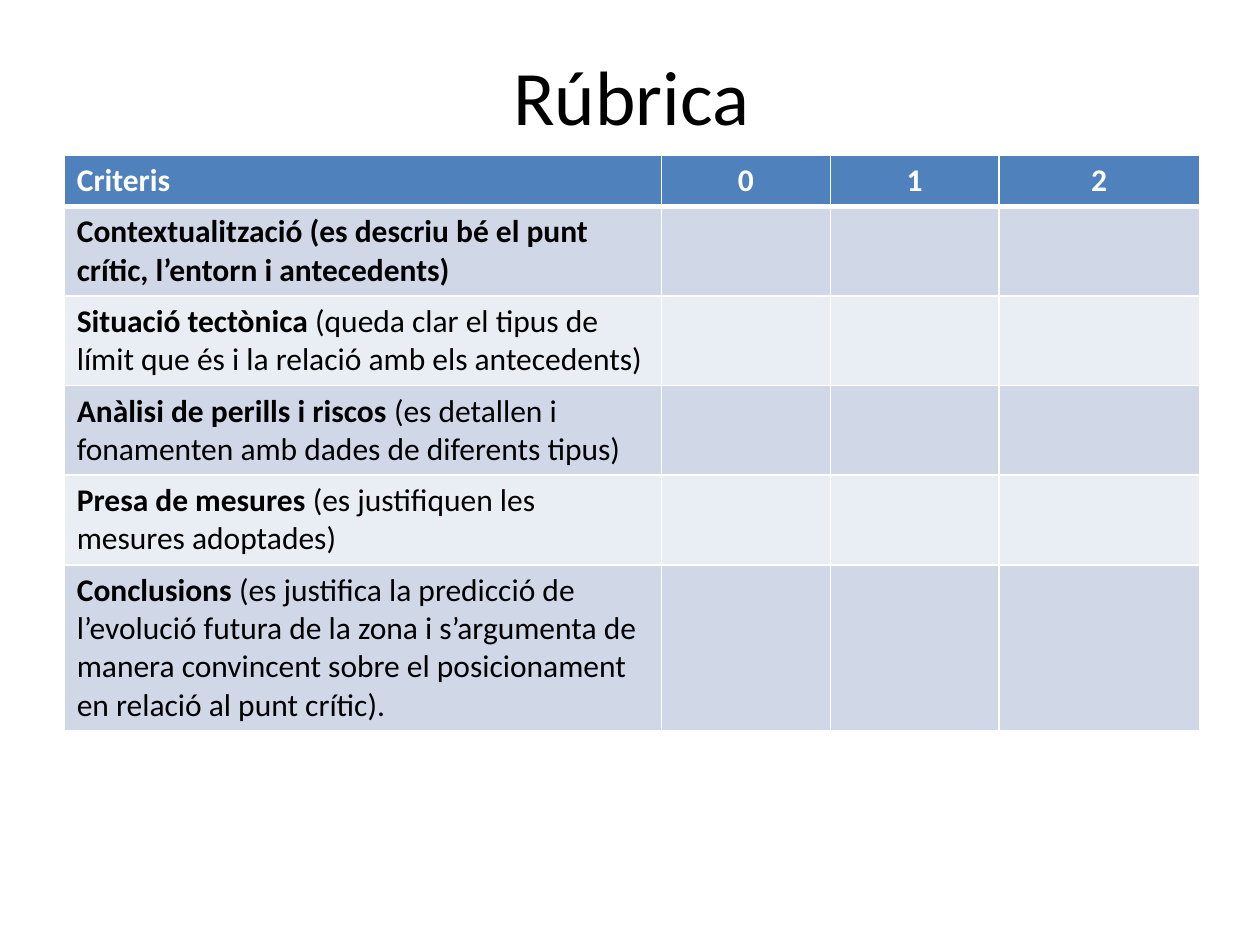
from dataclasses import dataclass

from lxml import etree
from pptx import Presentation
from pptx.dml.color import RGBColor
from pptx.enum.text import MSO_ANCHOR, PP_ALIGN
from pptx.oxml.ns import qn
from pptx.util import Inches, Pt

LEFT, CENTER = PP_ALIGN.LEFT, PP_ALIGN.CENTER
MIDDLE = MSO_ANCHOR.MIDDLE
TITLE_ONLY = 5


@dataclass(frozen=True)
class Theme:
    font: str = "Calibri"
    title_size: int = 44
    table_size: int = 18
    text: str = "000000"
    header_text: str = "FFFFFF"
    header_fill: str = "4F81BD"
    bands: tuple = ("D0D8E8", "E9EDF4")
    border: str = "FFFFFF"
    thin: int = 1
    thick: int = 3


class RubricSlide:
    """Holds the theme and the slide; lengths are shares of the slide's size."""

    def __init__(self, prs, theme):
        self.theme = theme
        self.width, self.height = prs.slide_width, prs.slide_height
        self.slide = prs.slides.add_slide(prs.slide_layouts[TITLE_ONLY])

    def box(self, left, top, width, height):
        return (int(left * self.width), int(top * self.height),
                int(width * self.width), int(height * self.height))

    def style(self, paragraph, size, color, align):
        paragraph.alignment = align
        font = paragraph.font
        font.name, font.size = self.theme.font, Pt(size)
        font.color.rgb = RGBColor.from_string(color)

    def title(self, text, *area):
        title = self.slide.shapes.title
        title.left, title.top, title.width, title.height = self.box(*area)
        frame = title.text_frame
        frame.text = text
        frame.vertical_anchor = MIDDLE
        self.style(frame.paragraphs[0], self.theme.title_size, self.theme.text, CENTER)

    def borders(self, cell, **points):
        """Draw the given sides (L, R, T, B); they go ahead of the cell's fill."""
        properties = cell._tc.get_or_add_tcPr()
        for side, width in points.items():
            line = etree.SubElement(properties, qn(f"a:ln{side}"), w=str(Pt(width)))
            fill = etree.SubElement(line, qn("a:solidFill"))
            etree.SubElement(fill, qn("a:srgbClr"), val=self.theme.border)

    def cell(self, cell, row, runs, align):
        theme = self.theme
        is_header = row == 0
        self.borders(cell, L=theme.thin, R=theme.thin,
                     T=theme.thick if row == 1 else theme.thin,
                     B=theme.thick if is_header else theme.thin)
        cell.fill.solid()
        fill = theme.header_fill if is_header else theme.bands[(row - 1) % 2]
        cell.fill.fore_color.rgb = RGBColor.from_string(fill)
        paragraph = cell.text_frame.paragraphs[0]
        color = theme.header_text if is_header else theme.text
        self.style(paragraph, theme.table_size, color, align)
        for text, bold in runs:
            run = paragraph.add_run()
            run.text, run.font.bold = text, bold
            # Table styles override paragraph defaults, so runs carry the format
            run.font.name, run.font.size = theme.font, Pt(theme.table_size)
            run.font.color.rgb = RGBColor.from_string(color)

    def table(self, left, top, columns, heights, rows):
        area = self.box(left, top, sum(columns), sum(heights))
        table = self.slide.shapes.add_table(len(rows), len(columns), *area).table
        for column, share in zip(table.columns, columns):
            column.width = int(share * self.width)
        for r, (height, contents) in enumerate(zip(heights, rows)):
            table.rows[r].height = int(height * self.height)
            for c, runs in enumerate(contents):
                self.cell(table.cell(r, c), r, runs, CENTER if c else LEFT)


# Rubric content: each criterion is a bold name and a plain explanation
SCORES = ["0", "1", "2"]
CRITERIA = [
    ("Contextualització (es descriu bé el punt crític, l’entorn i antecedents)", ""),
    ("Situació tectònica", " (queda clar el tipus de límit que és i la relació "
     "amb els antecedents)"),
    ("Anàlisi de perills i riscos ", "(es detallen i fonamenten amb dades de "
     "diferents tipus)"),
    ("Presa de mesures ", "(es justifiquen les mesures adoptades)"),
    ("Conclusions ", "(es justifica la predicció de l’evolució futura de la zona i "
     "s’argumenta de manera convincent sobre el posicionament en relació al punt "
     "crític)."),
]


def main():
    prs = Presentation()
    prs.slide_width, prs.slide_height = Inches(10), Inches(7.5)
    rubric = RubricSlide(prs, Theme())

    # Title
    rubric.title("Rúbrica", 0.051, 0.13 / 7.5, 0.9, 1.25 / 7.5)

    # Scoring table: one line of header, two-line criteria, four-line conclusions
    header = [[(text, True)] for text in ["Criteris", *SCORES]]
    body = [[[(name, True)] + ([(detail, False)] if detail else [])]
            + [[] for _ in SCORES] for name, detail in CRITERIA]
    heights = [inches / 7.5 for inches in [0.41] + [0.7] * 4 + [1.3]]
    rubric.table(0.051, 1.23 / 7.5, [0.474, 0.134, 0.134, 0.159], heights,
                 [header, *body])

    prs.save("out.pptx")


if __name__ == "__main__":
    main()
